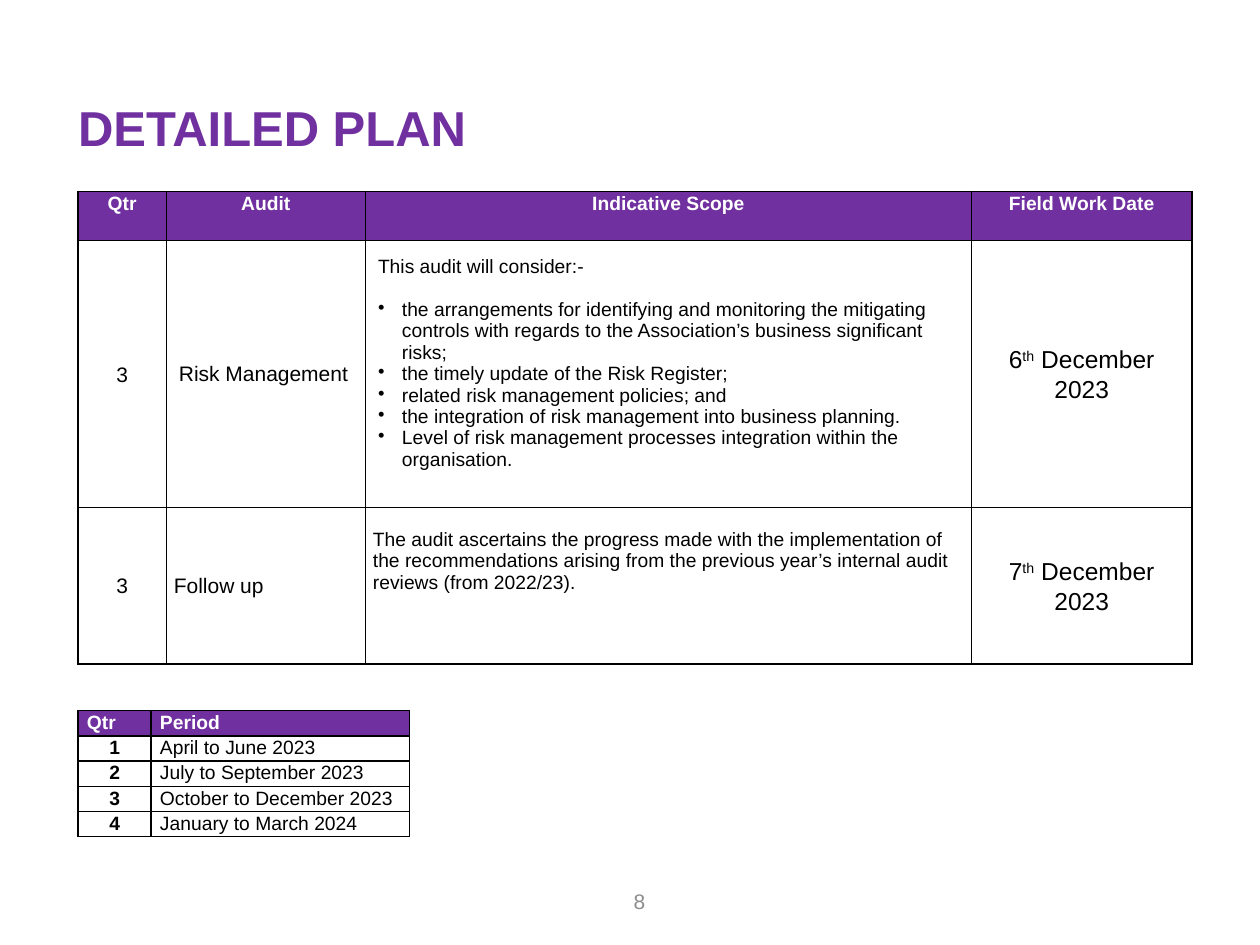
from lxml import etree
from pptx import Presentation
from pptx.dml.color import RGBColor
from pptx.enum.text import MSO_ANCHOR, MSO_AUTO_SIZE, PP_ALIGN
from pptx.oxml.ns import qn
from pptx.util import Inches, Pt

LEFT, CENTER, RIGHT, JUSTIFY = PP_ALIGN.LEFT, PP_ALIGN.CENTER, PP_ALIGN.RIGHT, PP_ALIGN.JUSTIFY
TOP, MIDDLE = MSO_ANCHOR.TOP, MSO_ANCHOR.MIDDLE
NO_AUTOFIT = MSO_AUTO_SIZE.NONE
TITLE_ONLY = 5

FONT = "Arial"
PURPLE, WHITE, BLACK, GREY = "7030A0", "FFFFFF", "000000", "8C8C8C"
LEFT_EDGE = 0.62

HEADERS = ["Qtr", "Audit", "Indicative Scope", "Field Work Date"]
RISK_INTRO = "This audit will consider:-"
RISK_SCOPE = [
    "the arrangements for identifying and monitoring the mitigating controls with regards "
    "to the Association’s business significant risks;",
    "the timely update of the Risk Register;",
    "related risk management policies; and",
    "the integration of risk management into business planning.",
    "Level of risk management processes integration within the organisation.",
]
FOLLOW_UP_SCOPE = (
    "The audit ascertains the progress made with the implementation of the recommendations "
    "arising from the previous year’s internal audit reviews (from 2022/23)."
)
PERIODS = [
    ("Qtr", "Period"),
    ("1", "April to June 2023"),
    ("2", "July to September 2023"),
    ("3", "October to December 2023"),
    ("4", "January to March 2024"),
]


def color(value):
    return RGBColor.from_string(value)


def add_text(frame, text, size=11, fill=BLACK, bold=False, align=LEFT, spacing=1.0,
             before=0, after=0, bullet=False, superscript=None):
    first = frame.paragraphs[0]
    paragraph = frame.add_paragraph() if first.runs else first
    paragraph.alignment = align
    paragraph.line_spacing = spacing
    paragraph.space_before, paragraph.space_after = Pt(before), Pt(after)
    if bullet:
        properties = paragraph._p.get_or_add_pPr()
        properties.set("marL", str(Inches(0.19)))
        properties.set("indent", str(Inches(-0.19)))
        etree.SubElement(properties, qn("a:buChar"), char="•")
    parts = text.partition(superscript) if superscript else (text,)
    for part in parts:
        run = paragraph.add_run()
        run.text = part
        run.font.name, run.font.size, run.font.bold = FONT, Pt(size), bold
        run.font.color.rgb = color(fill)
        if part == superscript:
            run.font._element.set("baseline", "30000")


def set_insets(target, horizontal, top=0, bottom=0):
    target.margin_left = target.margin_right = Inches(horizontal)
    target.margin_top, target.margin_bottom = Inches(top), Inches(bottom)


def format_cell(cell, fill=None, anchor=TOP, inset=0.06):
    properties = cell._tc.get_or_add_tcPr()
    for side in ("lnL", "lnR", "lnT", "lnB"):
        line = etree.SubElement(properties, qn(f"a:{side}"), w=str(Pt(1)))
        solid = etree.SubElement(line, qn("a:solidFill"))
        etree.SubElement(solid, qn("a:srgbClr"), val=BLACK)
    if fill:
        cell.fill.solid()
        cell.fill.fore_color.rgb = color(fill)
    else:
        cell.fill.background()
    cell.vertical_anchor = anchor
    set_insets(cell, inset)


def add_grid(slide, left, top, widths, heights):
    frame = slide.shapes.add_table(len(heights), len(widths), Inches(left), Inches(top),
                                   Inches(sum(widths)), Inches(sum(heights)))
    table = frame.table
    table.first_row = table.horz_banding = False
    for column, width in zip(table.columns, widths):
        column.width = Inches(width)
    for row, height in zip(table.rows, heights):
        row.height = Inches(height)
    return table


def add_title(slide, left, top, width, height):
    title = slide.shapes.title
    title.left, title.top = Inches(left), Inches(top)
    title.width, title.height = Inches(width), Inches(height)
    frame = title.text_frame
    frame.word_wrap, frame.auto_size, frame.vertical_anchor = True, NO_AUTOFIT, TOP
    set_insets(frame, 0)
    add_text(frame, "DETAILED PLAN", size=28, fill=PURPLE, bold=True, spacing=0.9)


def add_audit_plan(slide, left, top):
    table = add_grid(slide, left, top, [0.7, 1.58, 4.81, 1.75], [0.39, 2.12, 1.24])
    for column, header in enumerate(HEADERS):
        cell = table.cell(0, column)
        format_cell(cell, fill=PURPLE)
        add_text(cell.text_frame, header, fill=WHITE, bold=True, align=CENTER, spacing=1.07)

    audits = [
        ("Risk Management", "6th December 2023", {}),
        ("Follow up", "7th December 2023", {"spacing": 1.07, "before": 2, "after": 2}),
    ]
    centred = {"align": CENTER, "spacing": 1.07, "before": 6}
    for row, (audit, date, audit_format) in enumerate(audits, start=1):
        for column in range(len(HEADERS)):
            format_cell(table.cell(row, column), anchor=MIDDLE, inset=0.1 if row == 1 else 0.06)
        add_text(table.cell(row, 0).text_frame, "3", size=12, **centred)
        add_text(table.cell(row, 1).text_frame, audit, size=12, **audit_format)
        add_text(table.cell(row, 3).text_frame, date, size=14, superscript="th", **centred)

    risk_cell, follow_up_cell = table.cell(1, 2), table.cell(2, 2)
    set_insets(risk_cell, 0.1, top=0.05, bottom=0.22)
    add_text(risk_cell.text_frame, RISK_INTRO, after=12)
    for item in RISK_SCOPE:
        add_text(risk_cell.text_frame, item, bullet=True)
    follow_up_cell.vertical_anchor = TOP
    set_insets(follow_up_cell, 0.06, top=0.17)
    add_text(follow_up_cell.text_frame, FOLLOW_UP_SCOPE)


def add_period_key(slide, left, top):
    table = add_grid(slide, left, top, [0.58, 2.05], [0.2] * len(PERIODS))
    for row, values in enumerate(PERIODS):
        header = row == 0
        for column, value in enumerate(values):
            cell = table.cell(row, column)
            format_cell(cell, fill=PURPLE if header else None, inset=0.07)
            add_text(cell.text_frame, value, fill=WHITE if header else BLACK,
                     bold=header or column == 0, spacing=1.07,
                     align=JUSTIFY if header or column else CENTER)


def add_page_number(slide, left, top, width, height):
    box = slide.shapes.add_textbox(Inches(left), Inches(top), Inches(width), Inches(height))
    frame = box.text_frame
    frame.word_wrap, frame.vertical_anchor = True, MIDDLE
    add_text(frame, "8", size=12, fill=GREY, align=RIGHT)


def main():
    presentation = Presentation()
    presentation.slide_width, presentation.slide_height = Inches(10), Inches(7.5)
    slide = presentation.slides.add_slide(presentation.slide_layouts[TITLE_ONLY])
    add_title(slide, LEFT_EDGE, 0.83, 8.75, 0.42)
    add_page_number(slide, 4.77, 6.95, 0.45, 0.4)
    add_audit_plan(slide, LEFT_EDGE, 1.52)
    add_period_key(slide, LEFT_EDGE, 5.64)
    presentation.save("out.pptx")


if __name__ == "__main__":
    main()
